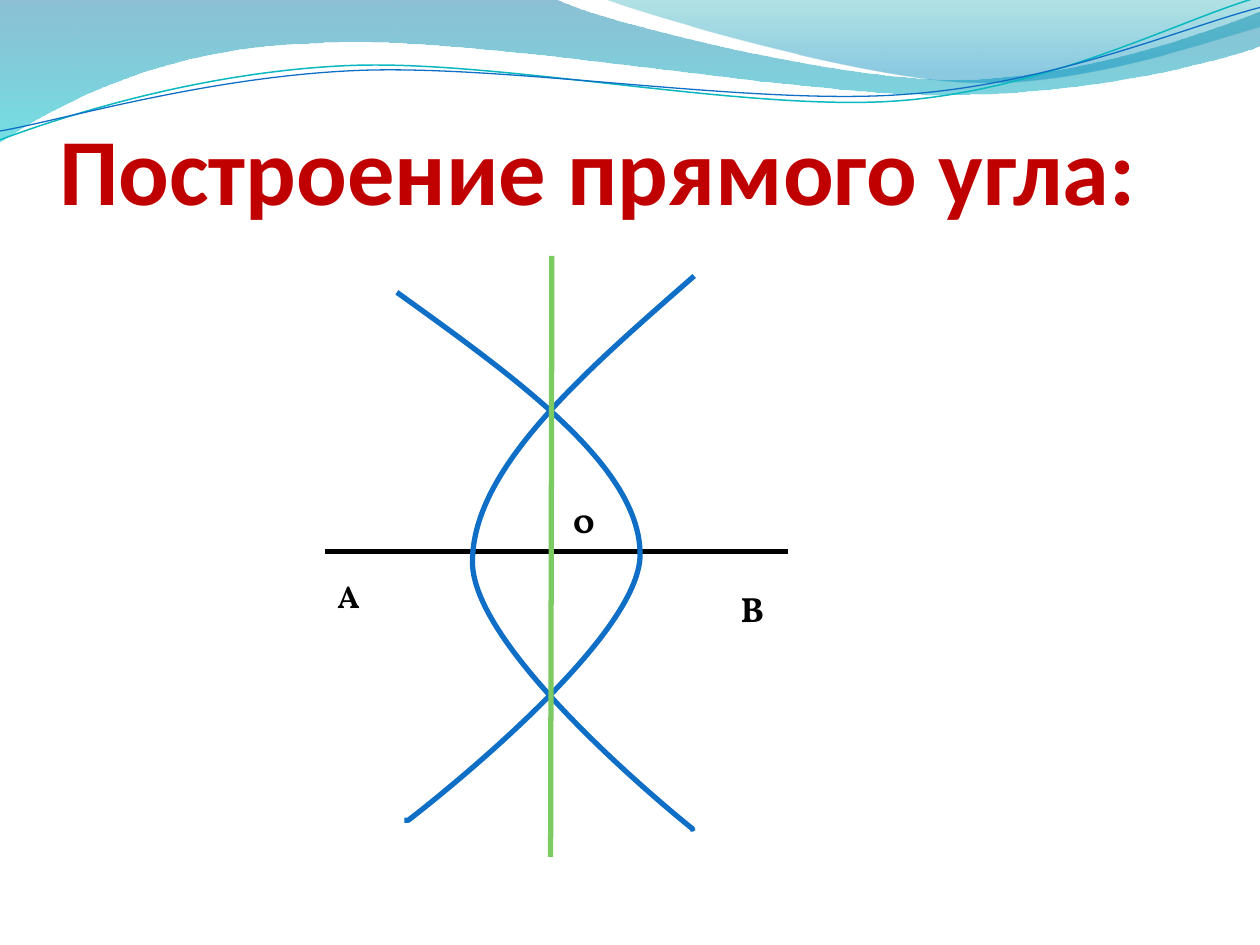
"""Build a slide showing the construction of a right angle with two arcs."""
from math import cos, radians, sin

from lxml import etree
from pptx import Presentation
from pptx.dml.color import RGBColor
from pptx.enum.shapes import MSO_CONNECTOR
from pptx.enum.text import MSO_ANCHOR
from pptx.oxml.ns import qn
from pptx.util import Inches, Pt

STRAIGHT = MSO_CONNECTOR.STRAIGHT
TOP, BOTTOM = MSO_ANCHOR.TOP, MSO_ANCHOR.BOTTOM
BLACK = RGBColor(0x00, 0x00, 0x00)
RED = RGBColor(0xC0, 0x00, 0x00)
BLUE = RGBColor(0x0F, 0x6F, 0xC6)
TEAL = RGBColor(0x0A, 0xB8, 0xBF)
GREEN = RGBColor(0x7C, 0xCA, 0x62)
DEEP_BLUE = RGBColor(0x00, 0x74, 0xA1)
AQUA = RGBColor(0x00, 0xC6, 0xCF)
SEA_GREEN = RGBColor(0x00, 0xA1, 0xA9)
SKY_BLUE = RGBColor(0x00, 0x8B, 0xBF)
RIPPLE_TILT = 2.7

# Each outline is a start point, then segments: (x, y) lines or six-number Bézier curves.
WAVES = [
    ([(0, 0), (4.4, -0.01), (4.76, 0.17, 6.64, 0.63, 7.58, 0.63),
      (8.53, 0.63, 9.58, 0.26, 10, 0.09), (10.01, 0.36),
      (9.83, 0.44, 8.7, 0.76, 7.46, 0.75), (6.22, 0.75, 3.82, 0.28, 2.57, 0.34),
      (1.29, 0.36, 0.46, 0.83, -0.01, 1.13), (0, 0)],
     [(0, DEEP_BLUE, 45), (1, AQUA, 55)]),
    ([(4.79, -0.01), (5.09, 0.11, 6.82, 0.62, 7.69, 0.65),
      (8.56, 0.69, 9.61, 0.32, 10, 0.21), (10, 0), (4.79, -0.01)],
     [(0, SEA_GREEN, 30), (0.8, SKY_BLUE, 45)]),
]
RIPPLES = [
    ([(0, 1.11), (0.48, 0.93, 1.58, 0.57, 2.77, 0.52),
      (3.95, 0.47, 5.93, 0.89, 7.13, 0.8), (8.33, 0.71, 9.38, 0.15, 9.98, -0.02)],
     TEAL, 0.85, (4.99, 0.58)),
    ([(0, 1.04), (0.47, 0.96, 1.64, 0.61, 2.83, 0.56),
      (4.03, 0.51, 5.97, 0.84, 7.17, 0.75), (8.36, 0.67, 9.41, 0.21, 10, 0.06)],
     BLUE, 0.75, (5, 0.59)),
]
ARCS = [
    [(3.15, 2.32), (4.11, 3.01, 5.07, 3.7, 5.08, 4.39),
     (5.1, 5.09, 3.24, 6.51, 3.24, 6.51), (3.24, 6.51), (3.21, 6.51)],
    [(5.51, 2.19), (4.63, 2.96, 3.75, 3.72, 3.75, 4.46),
     (3.75, 5.19, 5.5, 6.58, 5.5, 6.58), (5.5, 6.58), (5.48, 6.58)],
]
SEGMENT_AB = (2.58, 4.38, 6.25, 4.38, BLACK)
PERPENDICULAR = (4.38, 2.03, 4.37, 6.8, GREEN)
TITLE = ("Построение прямого угла:", (0.47, 0.62, 9, 1.16), 54, "Calibri", RED)
POINT_LABELS = [
    ("А", (2.58, 4.53, 0.47, 0.4), 18, "Vollkorn", BLACK),
    ("В", (5.78, 4.61, 0.47, 0.44), 20, "Vollkorn", BLACK),
    ("0", (4.45, 3.91, 0.31, 0.44), 20, "Vollkorn", BLACK),
]


def pairs(segment):
    return list(zip(segment[::2], segment[1::2]))


def turn(segment, center, degrees):
    angle = radians(degrees)
    turned = []
    for x, y in pairs(segment):
        dx, dy = x - center[0], y - center[1]
        turned += [center[0] + dx * cos(angle) - dy * sin(angle),
                   center[1] + dx * sin(angle) + dy * cos(angle)]
    return turned


def add_outline(page, outline, close=False):
    points = [(Inches(x), Inches(y)) for segment in outline for x, y in pairs(segment)]
    builder = page.shapes.build_freeform(*points[0])
    builder.add_line_segments(points[1:], close=close)
    shape = builder.convert_to_shape()
    shape.shadow.inherit = False
    strokes = iter(list(shape._element.iter(qn("a:lnTo"))))
    for segment in outline[1:]:
        stroke = next(strokes)
        if len(segment) == 6:
            stroke.addprevious(curve := etree.Element(qn("a:cubicBezTo")))
            for part in (stroke, next(strokes), next(strokes)):
                curve.append(part[0])
                part.getparent().remove(part)
    return shape


def add_wave(page, outline, stops):
    shape = add_outline(page, outline, close=True)
    shape.line.fill.background()
    shape.fill.gradient()
    shape.fill.gradient_angle = 270
    for stop, (position, color, _) in zip(shape.fill.gradient_stops, stops):
        stop.position = position
        stop.color.rgb = color
    color_tags = list(shape._element.spPr.find(qn("a:gradFill")).iter(qn("a:srgbClr")))
    for tag, (_, _, opacity) in zip(color_tags, stops):
        etree.SubElement(tag, qn("a:alpha"), val=str(opacity * 1000))


def add_curve(page, outline, color, width):
    shape = add_outline(page, outline)
    shape.fill.background()
    shape.line.color.rgb = color
    shape.line.width = Pt(width)
    return shape


def add_ripple(page, outline, color, width, center):
    level = [turn(segment, center, RIPPLE_TILT) for segment in outline]
    add_curve(page, level, color, width).rotation = 360 - RIPPLE_TILT


def add_line(page, x1, y1, x2, y2, color):
    line = page.shapes.add_connector(STRAIGHT, *map(Inches, (x1, y1, x2, y2)))
    line.line.color.rgb = color
    line.line.width = Pt(3)
    etree.SubElement(line._element.spPr, qn("a:effectLst"))


def add_text(page, text, place, size, font_name, color, anchor=TOP):
    box = page.shapes.add_textbox(*map(Inches, place))
    frame = box.text_frame
    frame.word_wrap = True
    frame.vertical_anchor = anchor
    frame.text = text
    font = frame.paragraphs[0].runs[0].font
    font.size, font.name, font.bold = Pt(size), font_name, True
    font.color.rgb = color
    return frame


def main():
    deck = Presentation()
    deck.slide_width, deck.slide_height = Inches(10), Inches(7.5)
    page = deck.slides.add_slide(deck.slide_layouts[6])
    for wave in WAVES:
        add_wave(page, *wave)
    for ripple in RIPPLES:
        add_ripple(page, *ripple)
    title = add_text(page, *TITLE, anchor=BOTTOM)
    title.margin_left = title.margin_right = title.margin_bottom = 0
    add_line(page, *SEGMENT_AB)
    for arc in ARCS:
        add_curve(page, arc, BLUE, 3)
    add_line(page, *PERPENDICULAR)
    for label in POINT_LABELS:
        add_text(page, *label)
    deck.save("out.pptx")


if __name__ == "__main__":
    main()
